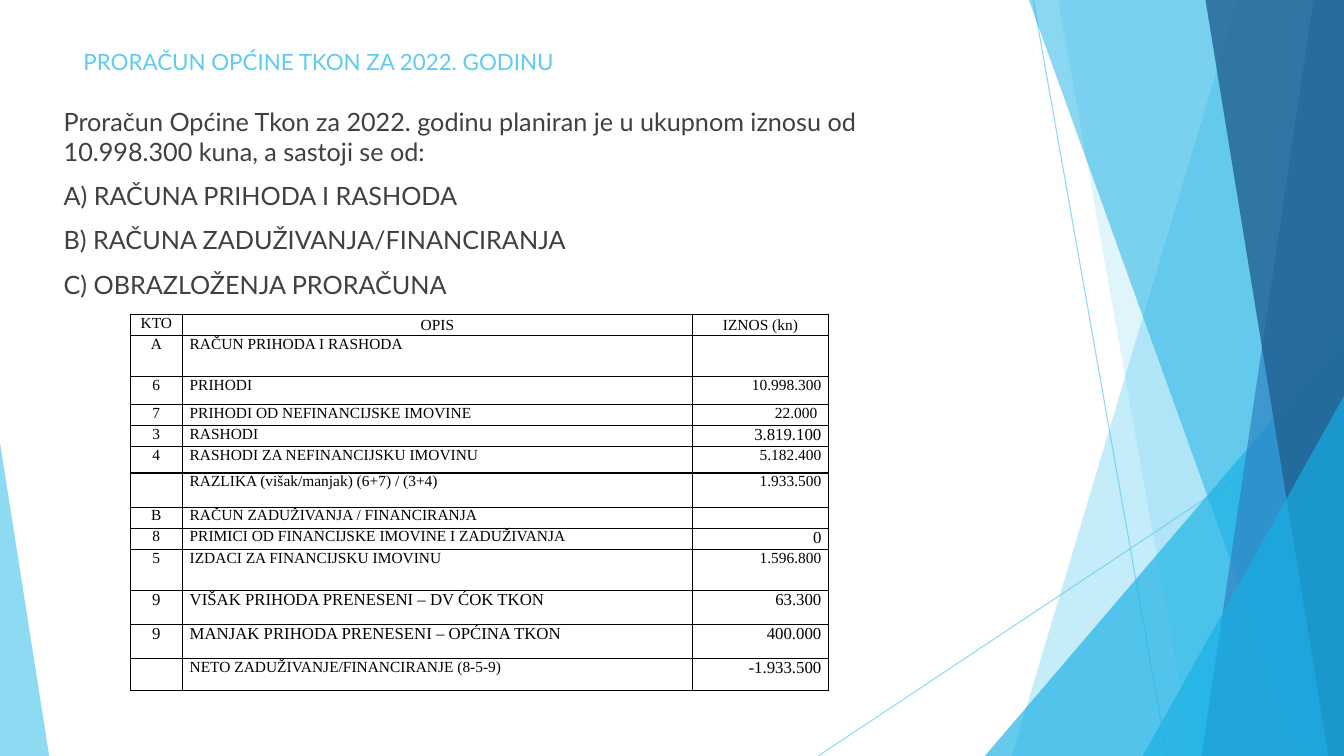
from lxml import etree
from pptx import Presentation
from pptx import util as u
from pptx.dml.color import RGBColor
from pptx.enum import shapes, text
from pptx.oxml.ns import qn

WIDTH, HEIGHT = 33.87, 19.05
SKY, CYAN, BLUE, NAVY = "5FCBEF", "17B0E4", "2E83C3", "226292"
BLACK, GREY = "000000", "404040"
ALIGN = text.PP_ALIGN
COLUMN_ALIGN = [ALIGN.CENTER, ALIGN.JUSTIFY, ALIGN.RIGHT]

BODY = [
    "Proračun Općine Tkon za 2022. godinu planiran je u ukupnom iznosu od "
    "10.998.300 kuna, a sastoji se od:",
    "A) RAČUNA PRIHODA I RASHODA",
    "B) RAČUNA ZADUŽIVANJA/FINANCIRANJA",
    "C) OBRAZLOŽENJA PRORAČUNA",
]

# Row height in cm, text sizes of the three cells, then their texts
BUDGET = [
    (0.53, (11, 11, 11), ("KTO", "OPIS", "IZNOS (kn)")),
    (1.04, (11, 11, 11), ("A", "RAČUN PRIHODA I RASHODA", "")),
    (0.71, (11, 11, 11), ("6", "PRIHODI", "10.998.300")),
    (0.53, (11, 11, 11), ("7", "PRIHODI OD NEFINANCIJSKE IMOVINE", "22.000")),
    (0.53, (11, 11, 12), ("3", "RASHODI", "3.819.100")),
    (0.66, (11, 11, 11), ("4", "RASHODI ZA NEFINANCIJSKU IMOVINU", "5.182.400")),
    (0.86, (11, 11, 11), ("", "RAZLIKA (višak/manjak) (6+7) / (3+4)", "1.933.500")),
    (0.53, (11, 11, 11), ("B", "RAČUN ZADUŽIVANJA / FINANCIRANJA", "")),
    (0.53, (11, 11, 12), ("8", "PRIMICI OD FINANCIJSKE IMOVINE I ZADUŽIVANJA", "0")),
    (1.04, (11, 11, 11), ("5", "IZDACI ZA FINANCIJSKU IMOVINU", "1.596.800")),
    (0.86, (12, 12, 12), ("9", "VIŠAK PRIHODA PRENESENI – DV ĆOK TKON", "63.300")),
    (0.86, (12, 12, 12), ("9", "MANJAK PRIHODA PRENESENI – OPĆINA TKON", "400.000")),
    (0.79, (11, 11, 12), ("", "NETO ZADUŽIVANJE/FINANCIRANJE (8-5-9)", "-1.933.500")),
]


def color(hex_code):
    return RGBColor.from_string(hex_code)


def set_opacity(shape, percent):
    for node in shape._element.spPr.iter(qn("a:srgbClr")):
        etree.SubElement(node, qn("a:alpha"), val=str(percent * 1000))


def paint(shape, fill, opacity):
    shape.shadow.inherit = False
    shape.fill.solid()
    shape.fill.fore_color.rgb = color(fill)
    shape.line.fill.background()
    set_opacity(shape, opacity)


def add_line(page, x1, y1, x2, y2):
    line = page.shapes.add_connector(
        shapes.MSO_CONNECTOR.STRAIGHT, u.Cm(x1), u.Cm(y1), u.Cm(x2), u.Cm(y2))
    line.line.color.rgb = color(SKY)
    line.line.width = u.Pt(0.75)
    set_opacity(line, 70)
    etree.SubElement(line._element.spPr, qn("a:effectLst"))


def add_band(page, top_x, bottom_x, fill, opacity):
    """Full-height band from a slanted left edge to the slide's right edge."""
    corners = [(WIDTH, 0), (WIDTH, HEIGHT), (bottom_x, HEIGHT)]
    outline = page.shapes.build_freeform(u.Cm(top_x), 0)
    outline.add_line_segments([(u.Cm(x), u.Cm(y)) for x, y in corners])
    paint(outline.convert_to_shape(), fill, opacity)


def add_triangle(page, left, top, width, apex, fill, opacity):
    """Triangle that stands on the slide's bottom edge."""
    triangle = page.shapes.add_shape(
        shapes.MSO_SHAPE.ISOSCELES_TRIANGLE,
        u.Cm(left), u.Cm(top), u.Cm(width), u.Cm(HEIGHT - top))
    triangle.adjustments[0] = apex
    paint(triangle, fill, opacity)


def write(para, words, size, font="Lato", ink=GREY, align=ALIGN.LEFT, before=0):
    para.alignment = align
    para.space_before = u.Pt(before)
    if not words:
        para._p.get_or_add_endParaRPr().set("sz", str(size * 100))
        return
    span = para.add_run()
    span.text = words
    span.font.size = u.Pt(size)
    span.font.name = font
    span.font.color.rgb = color(ink)


def fill_placeholder(page, box, place, lines, **style):
    box.left, box.top, box.width, box.height = [u.Cm(length) for length in place]
    page.shapes._spTree.append(box._element)  # bring in front of the bands
    frame = box.text_frame
    frame.word_wrap = True
    frame.auto_size = text.MSO_AUTO_SIZE.NONE
    frame.vertical_anchor = text.MSO_ANCHOR.TOP
    for number, words in enumerate(lines):
        para = frame.add_paragraph() if number else frame.paragraphs[0]
        write(para, words, **style)
        properties = para._p.get_or_add_pPr()
        properties.set("marL", "0")
        properties.set("indent", "0")
        etree.SubElement(properties, qn("a:buNone"))


def add_borders(cell):
    properties = cell._tc.get_or_add_tcPr()
    for position, side in enumerate(("lnL", "lnR", "lnT", "lnB")):
        border = etree.Element(qn("a:" + side), w=str(u.Pt(1)))
        solid = etree.SubElement(border, qn("a:solidFill"))
        etree.SubElement(solid, qn("a:srgbClr"), val=BLACK)
        properties.insert(position, border)


def add_budget_table(page):
    widths = [1.32, 12.85, 3.43]
    heights = [row[0] for row in BUDGET]
    table = page.shapes.add_table(
        len(BUDGET), len(widths), u.Cm(3.28), u.Cm(7.92),
        u.Cm(sum(widths)), u.Cm(sum(heights))).table
    table.first_row = table.horz_banding = False
    for column, width in zip(table.columns, widths):
        column.width = u.Cm(width)
    for r, (height, sizes, texts) in enumerate(BUDGET):
        table.rows[r].height = u.Cm(height)
        for c, (size, words) in enumerate(zip(sizes, texts)):
            cell = table.cell(r, c)
            cell.fill.background()
            cell.margin_left = u.Cm(0.18)
            cell.margin_right = u.Cm(0.28 if words == "22.000" else 0.18)
            cell.margin_top = cell.margin_bottom = 0
            if r == 0 and c > 0:
                cell.vertical_anchor = text.MSO_ANCHOR.MIDDLE
            write(cell.text_frame.paragraphs[0], words, size, "Times New Roman",
                  BLACK, COLUMN_ALIGN[c] if r else ALIGN.CENTER)
            add_borders(cell)


def main():
    deck = Presentation()
    deck.slide_width, deck.slide_height = u.Cm(WIDTH), u.Cm(HEIGHT)
    page = deck.slides.add_slide(deck.slide_layouts[1])

    # Decorative lines, bands and triangles
    add_line(page, 26.04, 0, 29.41, HEIGHT)
    add_line(page, WIDTH, 10.24, 20.62, HEIGHT)
    add_band(page, 31.19, 25.5, SKY, 36)
    add_band(page, 26.67, 30.05, SKY, 20)
    add_triangle(page, 24.82, 8.46, 9.05, 1, CYAN, 66)
    add_band(page, 25.93, 32.79, CYAN, 50)
    add_band(page, 33.1, 30.28, BLUE, 70)
    add_band(page, 30.38, 33.48, NAVY, 80)
    add_triangle(page, 28.8, 9.98, 5.07, 1, CYAN, 66)
    add_triangle(page, 0, 11.15, 1.24, 0, SKY, 70)

    # Title and list
    fill_placeholder(page, page.shapes.title, (1.85, 1.09, 23.88, 1.22),
                     ["PRORAČUN OPĆINE TKON ZA 2022. GODINU"], size=16, ink=SKY)
    fill_placeholder(page, page.placeholders[1], (1.35, 2.54, 23.88, 10.77),
                     BODY, size=18, before=10)

    # Budget table
    add_budget_table(page)
    deck.save("out.pptx")


if __name__ == "__main__":
    main()
